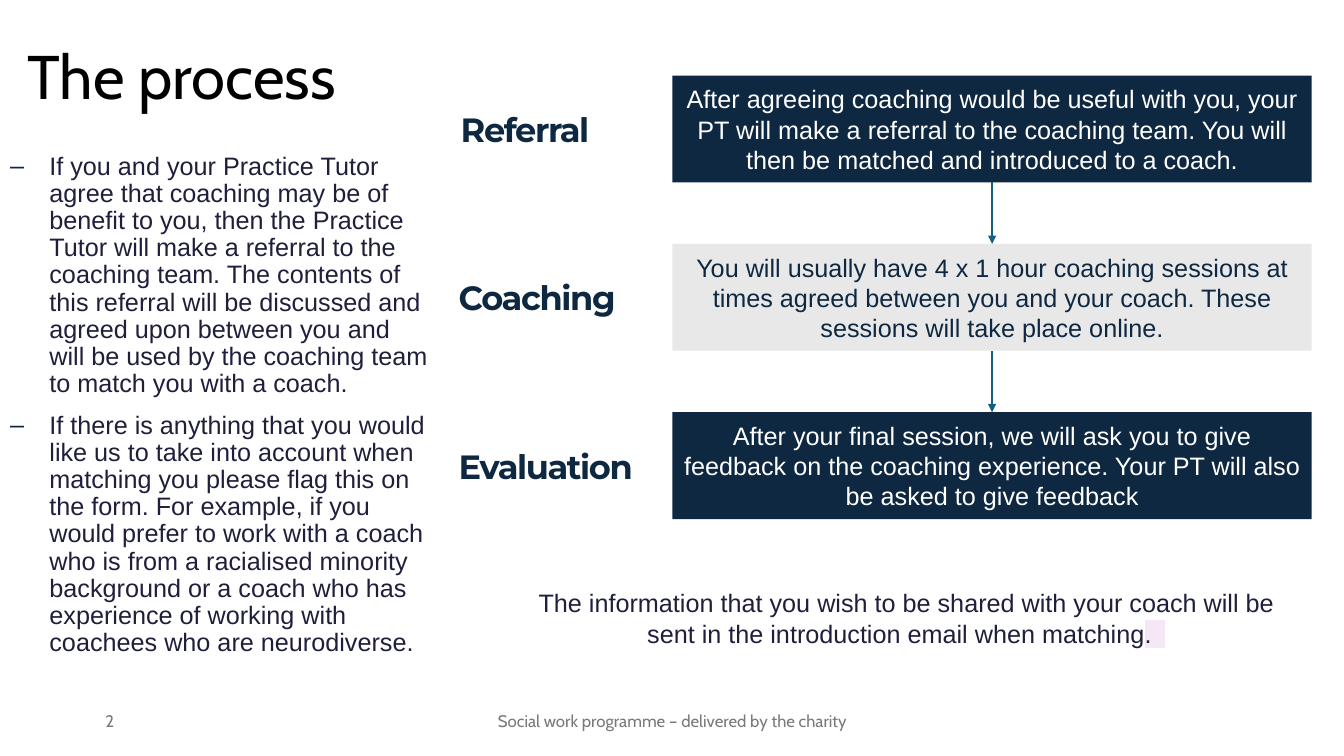
"""Build the slide on the coaching process: guidance, three linked stages and a note."""
from lxml.etree import SubElement
from pptx import Presentation
from pptx.dml.color import RGBColor
from pptx.enum.shapes import MSO_CONNECTOR as Connector, MSO_SHAPE as Shape
from pptx.enum.text import MSO_ANCHOR as Anchor, MSO_AUTO_SIZE as AutoSize, PP_ALIGN as Align
from pptx.oxml.ns import qn
from pptx.util import Inches, Pt

NAVY, GREY, WHITE, INK = "0E2841", "E8E8E8", "FFFFFF", "1F1F3C"
TITLE = "The process"
GUIDANCE = [
    "If you and your Practice Tutor agree that coaching may be of benefit to you, then the "
    "Practice Tutor will make a referral to the coaching team. The contents of this referral "
    "will be discussed and agreed upon between you and will be used by the coaching team to "
    "match you with a coach. ",
    "If there is anything that you would like us to take into account when matching you please "
    "flag this on the form. For example, if you would prefer to work with a coach who is from a "
    "racialised minority background or a coach who has experience of working with coachees who "
    "are neurodiverse. ",
]
STAGES = [
    ("Referral", 4.57, NAVY, WHITE,
     "After agreeing coaching would be useful with you, your PT will make a referral to the "
     "coaching team. You will then be matched and introduced to a coach."),
    ("Coaching", 4.55, GREY, NAVY,
     "You will usually have 4 x 1 hour coaching sessions at times agreed between you and your "
     "coach. These sessions will take place online."),
    ("Evaluation", 4.55, NAVY, WHITE,
     "After your final session, we will ask you to give feedback on the coaching experience. "
     "Your PT will also be asked to give feedback"),
]
NOTE = ("The information that you wish to be shared with your coach will be sent in the "
        "introduction email when matching")
NOTE_END = ".  "
FOOTERS = [
    ("Social work programme – delivered by the charity", (4.42, 6.95, 4.5, 0.4), Align.CENTER),
    ("2", (0.52, 6.95, 0.71, 0.4), Align.RIGHT),
]

STAGE_TOP, STAGE_PITCH = 0.75, 1.67
STAGE_LEFT, STAGE_WIDTH, STAGE_HEIGHT = 6.67, 6.34, 1.06
LABEL_WIDTH, LABEL_HEIGHT = 2.04, 0.4

TITLE_STYLE = {"name": "Cabin", "size": Pt(44)}
TEXT_STYLE = {"name": "Arial", "size": Pt(18)}
LABEL_STYLE = {"name": "Montserrat", "size": Pt(24), "bold": True}
FOOTER_STYLE = {"name": "Cabin", "size": Pt(12)}


def paint(target, color):
    target.solid()
    target.fore_color.rgb = RGBColor.from_string(color)


def assign(target, values):
    for name, value in values.items():
        setattr(target, name, value)


def place(shape, area):
    assign(shape, dict(zip(("left", "top", "width", "height"), map(Inches, area))))


def add_span(para, text, style, color):
    span = para.add_run()
    span.text = text
    assign(span.font, style)
    paint(span.font.fill, color)
    return span


def write(shape, text, style, color, align=Align.LEFT, anchor=Anchor.MIDDLE, **frame_values):
    frame = shape.text_frame
    assign(frame, {"word_wrap": True, "vertical_anchor": anchor, **frame_values})
    para = frame.paragraphs[0]
    para.alignment = align
    return add_span(para, text, style, color)


def add_box(page, area):
    return page.shapes.add_textbox(*map(Inches, area))


def add_guidance(body):
    place(body, (0, 1.47, 4.35, 5.8))
    frame = body.text_frame
    assign(frame, {"auto_size": AutoSize.NONE, "vertical_anchor": Anchor.TOP})
    for index, text in enumerate(GUIDANCE):
        para = frame.add_paragraph() if index else frame.paragraphs[0]
        assign(para, {"line_spacing": 0.9, "space_before": Pt(10 if index else 0)})
        props = para._p.get_or_add_pPr()
        props.set("marL", str(Inches(0.39)))
        props.set("indent", str(Inches(-0.39)))
        SubElement(SubElement(props, qn("a:buClr")), qn("a:srgbClr"), val=NAVY)
        SubElement(props, qn("a:buFont"), typeface="Arial")
        SubElement(props, qn("a:buChar"), char="–")
        add_span(para, text, TEXT_STYLE, INK)


def add_stage(page, index, stage):
    label, label_left, fill, color, text = stage
    top = STAGE_TOP + index * STAGE_PITCH
    area = (STAGE_LEFT, top, STAGE_WIDTH, STAGE_HEIGHT)
    box = page.shapes.add_shape(Shape.RECTANGLE, *map(Inches, area))
    box.shadow.inherit = False
    paint(box.fill, fill)
    box.line.fill.background()
    write(box, text, TEXT_STYLE, color, Align.CENTER)

    label_top = top + (STAGE_HEIGHT - LABEL_HEIGHT) / 2
    label_box = add_box(page, (label_left, label_top, LABEL_WIDTH, LABEL_HEIGHT))
    span = write(label_box, label, LABEL_STYLE, NAVY, auto_size=AutoSize.SHAPE_TO_FIT_TEXT,
                 margin_left=0, margin_top=0, margin_bottom=0)
    span.font._element.set("spc", "-100")
    return box


def add_arrow(page, upper, lower):
    arrow = page.shapes.add_connector(Connector.STRAIGHT, 0, 0, 0, 0)
    arrow.begin_connect(upper, 2)
    arrow.end_connect(lower, 0)
    paint(arrow.line.fill, "156082")
    arrow.line.width = Pt(1)
    SubElement(arrow.line._get_or_add_ln(), qn("a:tailEnd"), type="triangle")
    SubElement(arrow._element.spPr, qn("a:effectLst"))


def add_note(page):
    box = add_box(page, (5.12, 5.78, 7.74, 0.71))
    write(box, NOTE, TEXT_STYLE, INK, Align.CENTER, Anchor.TOP,
          auto_size=AutoSize.SHAPE_TO_FIT_TEXT)
    span = add_span(box.text_frame.paragraphs[0], NOTE_END, TEXT_STYLE, INK)
    props = span.font._element
    highlight = SubElement(props, qn("a:highlight"))
    SubElement(highlight, qn("a:srgbClr"), val="F5E7F6")
    props.find(qn("a:latin")).addprevious(highlight)


def main():
    deck = Presentation()
    assign(deck, {"slide_width": Inches(13.33), "slide_height": Inches(7.5)})
    page = deck.slides.add_slide(deck.slide_layouts[1])

    title, body = page.placeholders
    place(title, (0.17, 0.06, 5.72, 1.45))
    write(title, TITLE, TITLE_STYLE, "000000", auto_size=AutoSize.NONE)
    title.text_frame.paragraphs[0].line_spacing = 0.9
    add_guidance(body)

    boxes = [add_stage(page, index, stage) for index, stage in enumerate(STAGES)]
    for upper, lower in zip(boxes, boxes[1:]):
        add_arrow(page, upper, lower)
    add_note(page)
    for text, area, align in FOOTERS:
        write(add_box(page, area), text, FOOTER_STYLE, "797979", align)

    deck.save("out.pptx")


if __name__ == "__main__":
    main()
